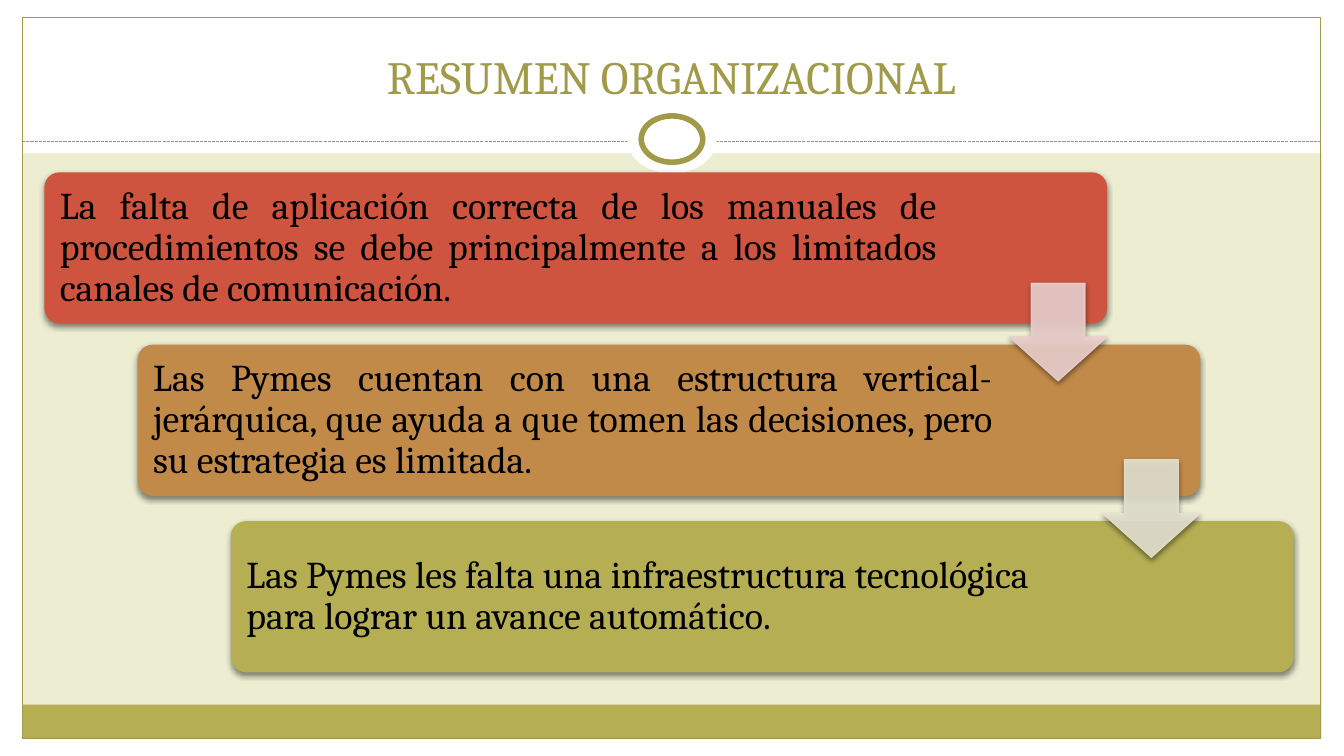
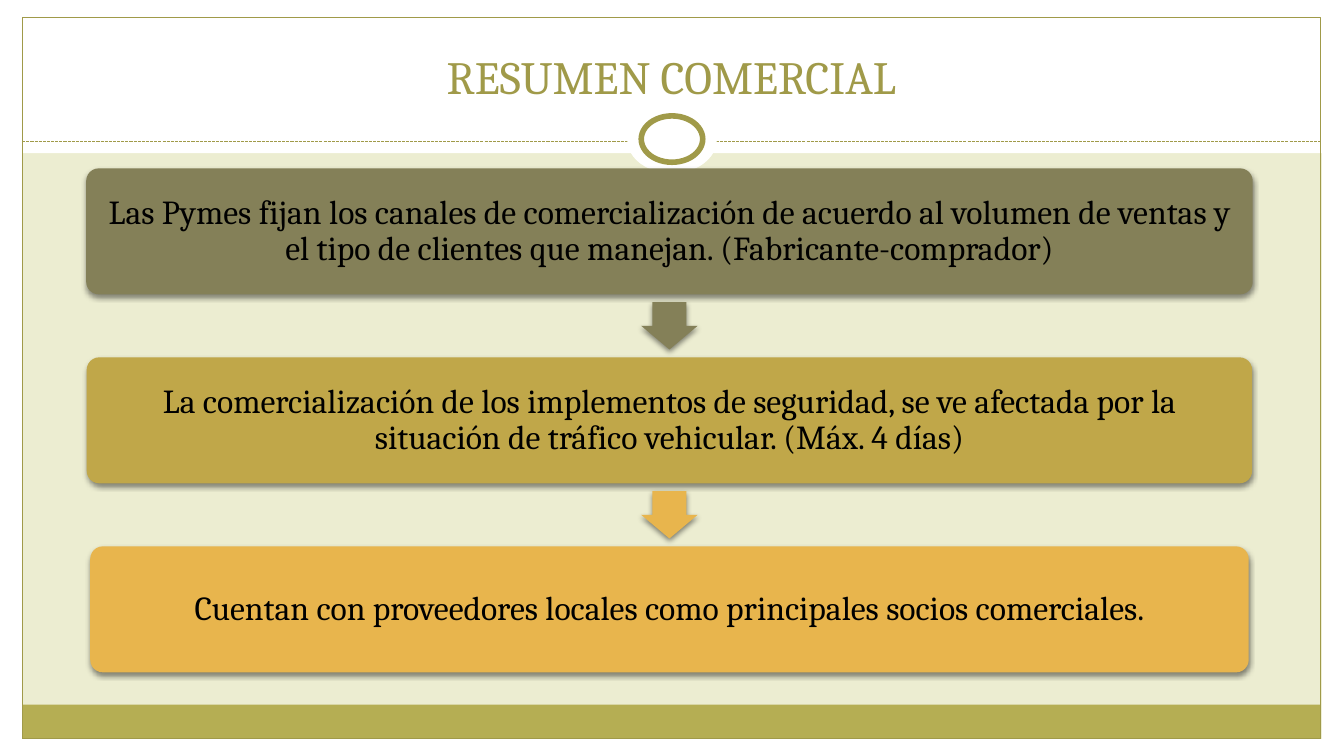
from lxml.etree import SubElement
from pptx import Presentation
from pptx.dml.color import RGBColor
from pptx.enum.dml import MSO_LINE
from pptx.enum.shapes import MSO_CONNECTOR, MSO_SHAPE
from pptx.enum.text import MSO_ANCHOR, PP_ALIGN
from pptx.oxml.ns import qn
from pptx.util import Inches, Pt

FONT = "Cambria"
WIDTH, HEIGHT = 13.33, 7.5
MARGIN = 0.22
INNER_WIDTH = 12.88
COLORS = {
    "background": "ECEDD1",
    "white": "FFFFFF",
    "black": "000000",
    "accent": "A09A49",
    "olive": "B5AE53",
    "red": "CF543F",
    "brown": "C28A49",
    "pale_red": "EDD1CF",
    "pale_olive": "E5E3D1",
    "moss": "848058",
    "mustard": "C0A749",
    "amber": "E8B54D",
}

STAIRS = [
    # top, colour, right inset, alignment, text
    (1.71, "red", 1.65, PP_ALIGN.JUSTIFY,
     "La falta de aplicación correcta de los manuales de procedimientos "
     "se debe principalmente a los limitados canales de comunicación."),
    (3.42, "brown", 2.02, PP_ALIGN.JUSTIFY,
     "Las Pymes cuentan con una estructura vertical- jerárquica, que ayuda "
     "a que tomen las decisiones, pero su estrategia es limitada."),
    (5.17, "olive", 2.02, PP_ALIGN.LEFT,
     "Las Pymes les falta una infraestructura tecnológica para lograr "
     "un avance automático."),
]
STAIR_ARROWS = ["pale_red", "pale_olive"]

STEPS = [
    # width, colour, text
    (11.57, "moss",
     "Las Pymes fijan los canales de comercialización de acuerdo al volumen "
     "de ventas y el tipo de clientes que manejan. (Fabricante-comprador)"),
    (11.56, "mustard",
     "La comercialización de los implementos de seguridad, se ve afectada "
     "por la situación de tráfico vehicular. (Máx. 4 días)"),
    (11.49, "amber",
     "Cuentan con proveedores locales como principales socios comerciales."),
]
STEP_ARROWS = ["moss", "amber"]


def color(name):
    return RGBColor.from_string(COLORS[name])


def add_shape(page, kind, left, top, width, height, fill=None, line=None, line_width=0.75):
    shape = page.shapes.add_shape(
        kind, Inches(left), Inches(top), Inches(width), Inches(height))
    shape.shadow.inherit = False
    if fill:
        shape.fill.solid()
        shape.fill.fore_color.rgb = color(fill)
    else:
        shape.fill.background()
    if line:
        shape.line.color.rgb = color(line)
        shape.line.width = Pt(line_width)
    else:
        shape.line.fill.background()
    return shape


def add_shadow(shape):
    """Give the shape a soft shadow straight below it."""
    effects = shape._element.spPr.find(qn("a:effectLst"))
    shadow = SubElement(effects, qn("a:outerShdw"), blurRad=str(Pt(4)), dist=str(Pt(2)),
                        dir="5400000", algn="ctr", rotWithShape="0")
    tint = SubElement(shadow, qn("a:srgbClr"), val=COLORS["black"])
    SubElement(tint, qn("a:alpha"), val="45000")


def set_opacity(shape, percent):
    """Apply one opacity to the fill and the outline."""
    for tint in shape._element.spPr.iter(qn("a:srgbClr")):
        if tint.getparent().tag == qn("a:solidFill"):
            SubElement(tint, qn("a:alpha"), val=str(percent * 1000))


def write(frame, text, size, text_color, align, anchor):
    frame.word_wrap = True
    frame.vertical_anchor = anchor
    para = frame.paragraphs[0]
    para.text = text
    para.alignment = align
    para.font.name = FONT
    para.font.size = Pt(size)
    para.font.color.rgb = color(text_color)
    return para


def add_card(page, left, top, width, height, fill, text, size, align, inset, right_inset):
    card = add_shape(page, MSO_SHAPE.ROUNDED_RECTANGLE, left, top, width, height, fill)
    card.adjustments[0] = 0.1
    add_shadow(card)
    frame = card.text_frame
    frame.margin_left = frame.margin_top = frame.margin_bottom = Inches(inset)
    frame.margin_right = Inches(right_inset)
    para = write(frame, text, size, "black", align, MSO_ANCHOR.MIDDLE)
    para.line_spacing = 0.9


def add_down_arrow(page, left, top, width, height, fill, shaft, head, line=None):
    arrow = add_shape(page, MSO_SHAPE.DOWN_ARROW, left, top, width, height, fill, line)
    arrow.adjustments[0] = shaft
    arrow.adjustments[1] = head
    add_shadow(arrow)
    return arrow


def add_divider(page, top):
    divider = page.shapes.add_connector(
        MSO_CONNECTOR.STRAIGHT, Inches(MARGIN), Inches(top),
        Inches(MARGIN + INNER_WIDTH), Inches(top))
    divider.line.color.rgb = color("accent")
    divider.line.width = Pt(0.75)
    divider.line.dash_style = MSO_LINE.SQUARE_DOT
    SubElement(divider._element.spPr, qn("a:effectLst"))


def add_page(deck, title):
    """Add a slide with the shared frame, bands, ring and title."""
    page = deck.slides.add_slide(deck.slide_layouts[6])
    page.background.fill.solid()
    page.background.fill.fore_color.rgb = color("background")

    bands = [
        (0, 7.33, WIDTH, 0.17, "white"),
        (0, 0, WIDTH, 1.52, "white"),
        (0, 0, MARGIN, HEIGHT, "white"),
        (WIDTH - MARGIN, 0, MARGIN, HEIGHT, "white"),
        (MARGIN, 6.99, INNER_WIDTH, 0.34, "olive"),
    ]
    for left, top, width, height, fill in bands:
        add_shape(page, MSO_SHAPE.RECTANGLE, left, top, width, height, fill)
    add_shape(page, MSO_SHAPE.RECTANGLE, MARGIN, 0.17, INNER_WIDTH, 7.16, line="accent")
    add_divider(page, 1.4)
    add_shape(page, MSO_SHAPE.OVAL, 6.22, 1.05, 0.89, 0.67, "white")
    add_shape(page, MSO_SHAPE.OVAL, 6.36, 1.15, 0.61, 0.46, "white", "accent", 4)

    box = page.shapes.add_textbox(Inches(0.44), Inches(0.25), Inches(12.44), Inches(0.83))
    write(box.text_frame, title, 33, "accent", PP_ALIGN.CENTER, MSO_ANCHOR.BOTTOM)
    return page


def add_staircase(page):
    first_left, shift, width, height = 0.44, 0.925, 10.54, 1.5
    arrow_size, arrow_rise = 0.97, 0.61
    for index, (top, fill, right_inset, align, text) in enumerate(STAIRS):
        add_card(page, first_left + index * shift, top, width, height,
                 fill, text, 27, align, 0.11, right_inset)
    for index, fill in enumerate(STAIR_ARROWS):
        right = first_left + index * shift + width
        next_top = STAIRS[index + 1][0]
        arrow = add_down_arrow(page, right - arrow_size, next_top - arrow_rise,
                               arrow_size, arrow_size, fill, 0.55, 0.45, line=fill)
        set_opacity(arrow, 90)


def add_flow(page):
    center, first_top, pitch, height = 6.64, 1.67, 1.875, 1.25
    arrow_width, arrow_height = 0.56, 0.47
    for index, (width, fill, text) in enumerate(STEPS):
        add_card(page, center - width / 2, first_top + index * pitch, width, height,
                 fill, text, 24, PP_ALIGN.CENTER, 0.1, 0.1)
    for index, fill in enumerate(STEP_ARROWS):
        gap_top = first_top + index * pitch + height
        arrow_top = gap_top + (pitch - height - arrow_height) / 2
        add_down_arrow(page, center - arrow_width / 2, arrow_top,
                       arrow_width, arrow_height, fill, 0.6, 0.5)


def main():
    deck = Presentation()
    deck.slide_width = Inches(WIDTH)
    deck.slide_height = Inches(HEIGHT)
    add_staircase(add_page(deck, "RESUMEN ORGANIZACIONAL"))
    add_flow(add_page(deck, "RESUMEN COMERCIAL"))
    deck.save("out.pptx")


if __name__ == "__main__":
    main()
